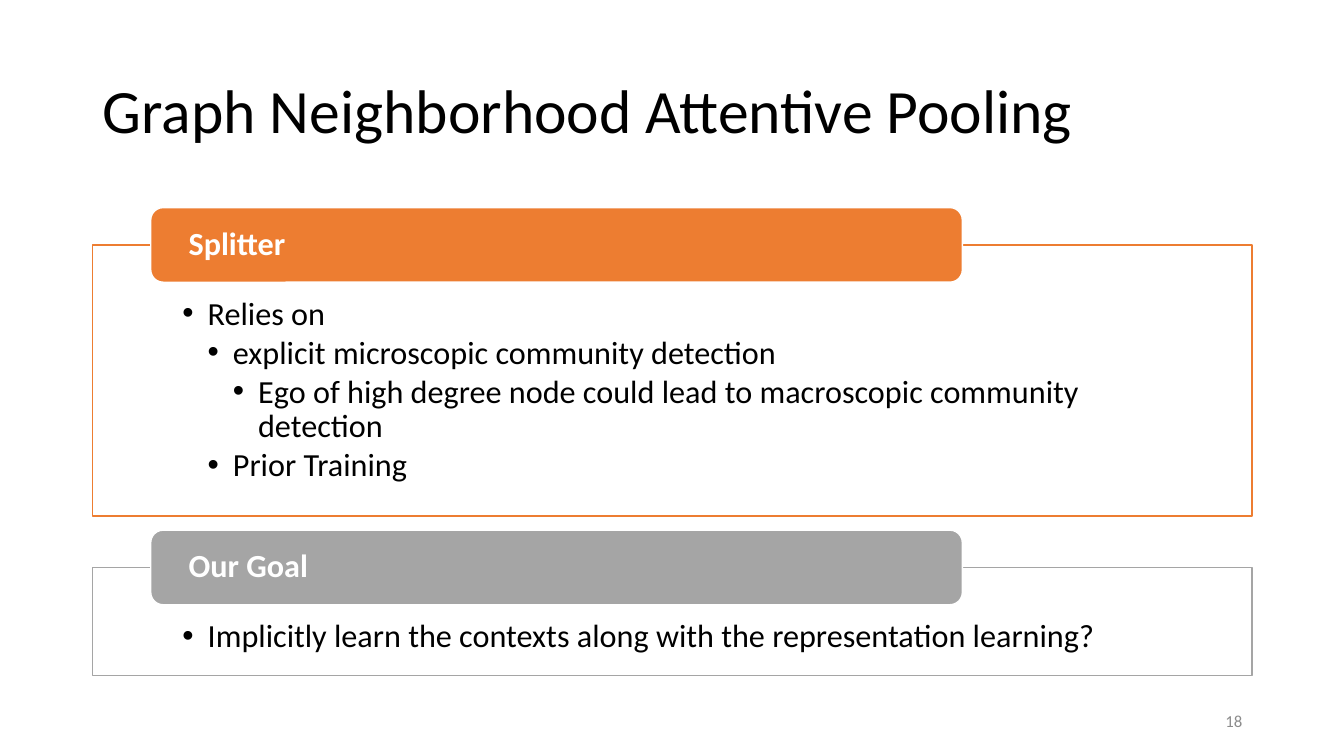
from lxml.etree import SubElement
from pptx import Presentation
from pptx.dml.color import RGBColor
from pptx.enum.shapes import MSO_SHAPE as SHAPE
from pptx.enum.text import MSO_ANCHOR as ANCHOR, PP_ALIGN as ALIGN
from pptx.oxml.ns import qn
from pptx.util import Inches, Pt

# Content: heading, colour, top of box, height of box, (level, bullet) lines
TITLE = "Graph Neighborhood Attentive Pooling"
PAGE = "18"
SECTIONS = [
    ("Splitter", "ED7D31", 2.43, 2.69, [
        (1, "Relies on"),
        (2, "explicit microscopic community detection"),
        (3, "Ego of high degree node could lead to macroscopic community detection"),
        (2, "Prior Training"),
    ]),
    ("Our Goal", "A5A5A5", 5.63, 1.07, [
        (1, "Implicitly learn the contexts along with the representation learning?"),
    ]),
]

# Layout in inches
WIDTH, HEIGHT = 13.33, 7.5
LEFT, BODY_W = 0.92, 11.5
TAB_W, TAB_H = BODY_W * 0.7, 0.74
TAB_LEFT = LEFT + BODY_W * 0.05
INDENT = 0.25


def rgb(color):
    return RGBColor.from_string(color)


def box(*lengths):
    return [Inches(n) for n in lengths]


def set_frame(tf, insets=(0.1, 0.05, 0.1, 0.05), anchor=ANCHOR.MIDDLE):
    tf.word_wrap = True
    tf.vertical_anchor = anchor
    tf.margin_left, tf.margin_top, tf.margin_right, tf.margin_bottom = box(*insets)


def write(p, text, size=23, color="000000", bold=False, align=ALIGN.LEFT,
          spacing=0.9, after=0, level=0):
    p.alignment, p.line_spacing = align, spacing
    p.space_before, p.space_after = Pt(0), Pt(after)
    if level:
        p.level = level
        pPr = p._p.get_or_add_pPr()
        pPr.set("marL", str(Inches(INDENT * level)))
        pPr.set("indent", str(-Inches(INDENT)))
        SubElement(pPr, qn("a:buFont"), typeface="Arial")
        SubElement(pPr, qn("a:buChar"), char="•")
    r = p.add_run()
    r.text = text
    r.font.name, r.font.size, r.font.bold = "Calibri", Pt(size), bold
    r.font.color.rgb = rgb(color)


def add_box(slide, kind, place, fill, line):
    s = slide.shapes.add_shape(kind, *box(*place))
    s.shadow.inherit = False
    s.fill.solid()
    s.fill.fore_color.rgb = rgb(fill)
    s.line.color.rgb = rgb(line)
    s.line.width = Pt(1)
    return s


def add_section(slide, heading, color, top, height, bullets):
    # Outlined body with bullets
    body = add_box(slide, SHAPE.RECTANGLE, (LEFT, top, BODY_W, height), "FFFFFF", color)
    fill = body.fill._xPr.find(qn("a:solidFill"))
    SubElement(fill[0], qn("a:alpha"), val="90000")
    tf = body.text_frame
    set_frame(tf, (0.89, 0.52, 0.89, 0.18), ANCHOR.TOP)
    for i, (level, text) in enumerate(bullets):
        p = tf.add_paragraph() if i else tf.paragraphs[0]
        write(p, text, level=level, after=3)

    # Heading tab centred on the top edge
    tab = add_box(slide, SHAPE.ROUNDED_RECTANGLE,
                  (TAB_LEFT, top - TAB_H / 2, TAB_W, TAB_H), color, "FFFFFF")
    set_frame(tab.text_frame, (0.34, 0, 0.34, 0))
    write(tab.text_frame.paragraphs[0], heading, color="FFFFFF", bold=True)


def main():
    prs = Presentation()
    prs.slide_width, prs.slide_height = box(WIDTH, HEIGHT)
    slide = prs.slides.add_slide(prs.slide_layouts[5])

    # Title
    title = slide.shapes.title
    title.left, title.top, title.width, title.height = box(LEFT, 0.4, BODY_W, 1.45)
    set_frame(title.text_frame)
    write(title.text_frame.paragraphs[0], TITLE, size=44)

    for section in SECTIONS:
        add_section(slide, *section)

    # Page number, right-aligned with the boxes
    number = slide.shapes.add_textbox(*box(LEFT + BODY_W - 3, 6.95, 3, 0.4))
    set_frame(number.text_frame)
    write(number.text_frame.paragraphs[0], PAGE, size=12, color="8C8C8C",
          align=ALIGN.RIGHT, spacing=1.0)

    prs.save("out.pptx")


if __name__ == "__main__":
    main()
